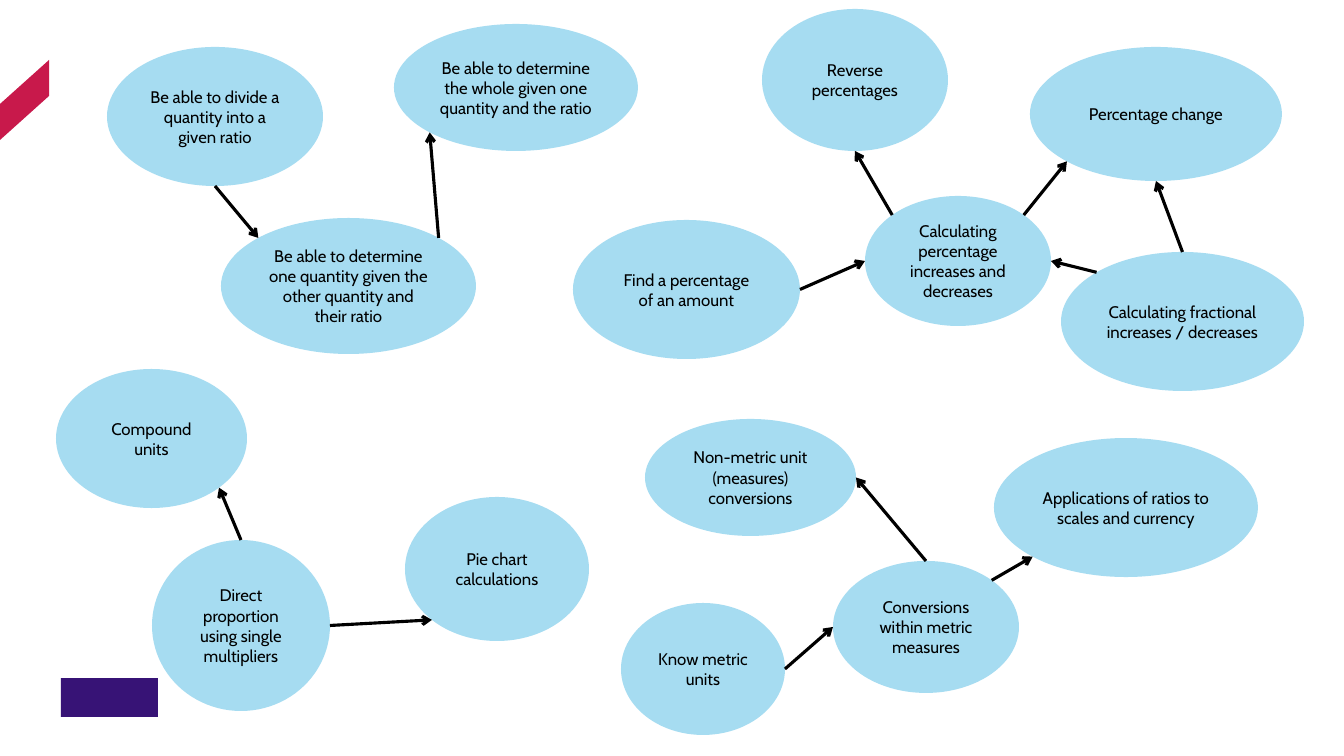
"""Build a slide of linked ratio, percentage and measures topics."""
import math

import pptx
import pptx.dml.color
import pptx.enum.shapes
import pptx.enum.text
import pptx.oxml
import pptx.oxml.ns
import pptx.util
from lxml import etree

PX = 914400 / 100.8
SKY = pptx.dml.color.RGBColor(0xA6, 0xDC, 0xF1)
CRIMSON = pptx.dml.color.RGBColor(0xC8, 0x19, 0x4B)
PURPLE = pptx.dml.color.RGBColor(0x37, 0x13, 0x76)
BLACK = pptx.dml.color.RGBColor(0, 0, 0)

TOP, TOP_LEFT, LEFT, BOTTOM_LEFT, BOTTOM, BOTTOM_RIGHT, RIGHT, TOP_RIGHT = range(8)

TOPICS = {
    "divide": ("Be able to divide a quantity into a given ratio", 107, 47, 216, 139),
    "whole": ("Be able to determine the whole given one quantity and the ratio", 394, 24, 244, 127),
    "one": ("Be able to determine one quantity given the other quantity and their ratio", 221, 218, 255, 136),
    "reverse": ("Reverse percentages", 762, 9, 186, 142),
    "change": ("Percentage change", 1030, 47, 252, 134),
    "find": ("Find a percentage of an amount", 573, 220, 227, 139),
    "increases": ("Calculating percentage increases and decreases", 865, 196, 186, 130),
    "fractional": ("Calculating fractional increases / decreases", 1061, 252, 243, 139),
    "compound": ("Compound units", 56, 369, 191, 139),
    "direct": ("Direct proportion using single multipliers", 152, 540, 178, 171),
    "pie": ("Pie chart calculations", 405, 497, 184, 144),
    "nonmetric": ("Non-metric unit (measures) conversions", 645, 419, 211, 117),
    "scales": ("Applications of ratios to scales and currency", 994, 438, 264, 139),
    "metric": ("Conversions within metric measures", 833, 561, 186, 132),
    "know": ("Know metric units", 621, 603, 164, 132),
}

ARROWS = [
    ("divide", BOTTOM, "one", TOP_LEFT),
    ("one", TOP_RIGHT, "whole", BOTTOM_LEFT),
    ("find", RIGHT, "increases", LEFT),
    ("increases", TOP_LEFT, "reverse", BOTTOM),
    ("increases", TOP_RIGHT, "change", BOTTOM_LEFT),
    ("fractional", TOP, "change", BOTTOM),
    ("fractional", TOP_LEFT, "increases", RIGHT),
    ("direct", TOP, "compound", BOTTOM_RIGHT),
    ("direct", RIGHT, "pie", BOTTOM_LEFT),
    ("know", RIGHT, "metric", LEFT),
    ("metric", TOP, "nonmetric", RIGHT),
    ("metric", TOP_RIGHT, "scales", BOTTOM_LEFT),
]


def px(value):
    return round(value * PX)


def ellipse_site(ellipse, site):
    angle = math.radians(90 + 45 * site)
    x = ellipse.left + ellipse.width / 2 * (1 + math.cos(angle))
    y = ellipse.top + ellipse.height / 2 * (1 - math.sin(angle))
    return round(x), round(y)


presentation = pptx.Presentation()
presentation.slide_width = px(1344)
presentation.slide_height = px(756)
slide = presentation.slides.add_slide(presentation.slide_layouts[6])

builder = slide.shapes.build_freeform(0, 104, scale=PX)
builder.add_line_segments([(49, 60), (49, 96), (0, 140)], close=True)
stripe = builder.convert_to_shape()
badge = slide.shapes.add_shape(
    pptx.enum.shapes.MSO_SHAPE.RECTANGLE, px(61), px(678), px(97), px(39)
)
for shape, colour in ((stripe, CRIMSON), (badge, PURPLE)):
    shape.shadow.inherit = False
    shape.fill.solid()
    shape.fill.fore_color.rgb = colour
    shape.line.fill.background()

ellipses = {}
for name, (text, *box) in TOPICS.items():
    ellipse = slide.shapes.add_shape(
        pptx.enum.shapes.MSO_SHAPE.OVAL, *[px(length) for length in box]
    )
    ellipse.shadow.inherit = False
    ellipse.fill.solid()
    ellipse.fill.fore_color.rgb = SKY
    ellipse.line.fill.background()
    text_frame = ellipse.text_frame
    text_frame.text = text
    text_frame.word_wrap = True
    text_frame.vertical_anchor = pptx.enum.text.MSO_ANCHOR.MIDDLE
    paragraph = text_frame.paragraphs[0]
    paragraph.alignment = pptx.enum.text.PP_ALIGN.CENTER
    font = paragraph.runs[0].font
    font.name = "Cabin"
    font.size = pptx.util.Pt(12)
    font.color.rgb = BLACK
    ellipses[name] = ellipse

qn = pptx.oxml.ns.qn
for start, start_site, end, end_site in ARROWS:
    connector = slide.shapes.add_connector(
        pptx.enum.shapes.MSO_CONNECTOR.STRAIGHT,
        *ellipse_site(ellipses[start], start_site),
        *ellipse_site(ellipses[end], end_site),
    )
    connector.line.color.rgb = BLACK
    connector.line.width = pptx.util.Pt(2.25)
    properties = connector._element.spPr
    etree.SubElement(properties.find(qn("a:ln")), qn("a:tailEnd"), type="arrow")
    etree.SubElement(properties, qn("a:effectLst"))
    joints = connector._element.find(".//" + qn("p:cNvCxnSpPr"))
    for tag, name, site in (("a:stCxn", start, start_site), ("a:endCxn", end, end_site)):
        etree.SubElement(
            joints, qn(tag), id=str(ellipses[name].shape_id), idx=str(site)
        )

presentation.save("out.pptx")
